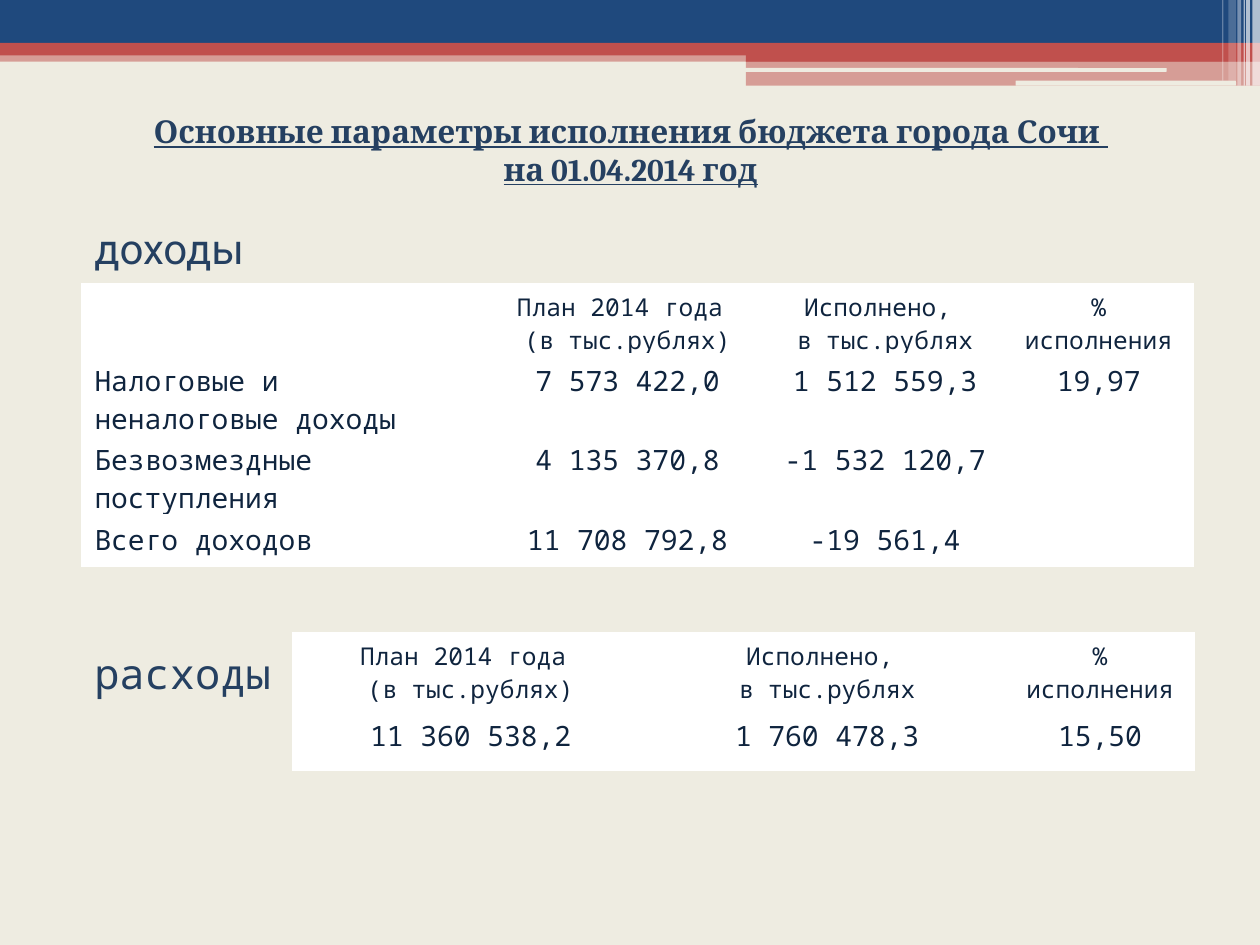
"""Build a slide with the income and expense tables of a city budget."""
from pptx import Presentation, util as u
from pptx.dml.color import RGBColor
from pptx.enum import shapes, text
from pptx.oxml.ns import qn
from lxml import etree

NAVY = RGBColor(0x1F, 0x49, 0x7D)
RED = RGBColor(0xC0, 0x50, 0x4D)
CREAM = RGBColor(0xEE, 0xEC, 0xE1)
WHITE = RGBColor(0xFF, 0xFF, 0xFF)
HEADING = RGBColor(0x25, 0x40, 0x61)
INK = RGBColor(0x0F, 0x24, 0x3E)
MONO = "Noto Sans Mono"
RECT = shapes.MSO_SHAPE.RECTANGLE
ROUND = shapes.MSO_SHAPE.ROUNDED_RECTANGLE

TITLE = "Основные параметры исполнения бюджета города Сочи \nна 01.04.2014 год"
HEADER = ["План 2014 года \n(в тыс.рублях)", "Исполнено, \nв тыс.рублях", "% исполнения"]
INCOME = [
    ["", *HEADER],
    ["Налоговые и неналоговые доходы", "7 573 422,0", "1 512 559,3", "19,97"],
    ["Безвозмездные поступления", "4 135 370,8", "-1 532 120,7", ""],
    ["Всего доходов", "11 708 792,8", "-19 561,4", ""],
]
EXPENSES = [HEADER, ["11 360 538,2", "1 760 478,3", "15,50"]]

LEFT = 0.65
LABELS = [("доходы", 1.72, "Roboto"), ("расходы", 5.09, MONO)]
TABLES = [
    (INCOME, LEFT, 2.25, [3.23, 2.2, 1.89, 1.5], [0.41] * 4),
    (EXPENSES, 2.32, 5.02, [2.83, 2.83, 1.5], [0.62, 0.47]),
]
BANDS = [
    (RECT, 0, 0.4, 10, 0.09, RED, 50),
    (RECT, 0, 0, 10, 0.34, NAVY, 100),
    (RECT, 0, 0.34, 10, 0.1, RED, 100),
    (RECT, 5.92, 0.39, 4.08, 0.1, RED, 100),
    (RECT, 5.92, 0.48, 4.08, 0.2, RED, 50),
    (ROUND, 5.91, 0.54, 3.35, 0.03, CREAM, 100),
    (ROUND, 8.06, 0.64, 1.75, 0.04, CREAM, 100),
]
STRIPES = [
    (9.94, 0.06, 0.68, 65), (9.89, 0.03, 0.68, 65), (9.87, 0.01, 0.68, 60),
    (9.82, 0.03, 0.68, 40), (9.75, 0.06, 0.64, 20), (9.7, 0.01, 0.64, 30),
]


def inches(*values):
    return [u.Inches(value) for value in values]


def write(frame, content, *, size, font=MONO, color=INK, align=text.PP_ALIGN.LEFT,
          bold=False, underline=False):
    frame.word_wrap = True
    for index, line in enumerate(content.split("\n")):
        paragraph = frame.add_paragraph() if index else frame.paragraphs[0]
        paragraph.alignment = align
        run = paragraph.add_run()
        run.text = line
        run.font.name, run.font.size = font, u.Pt(size)
        run.font.bold, run.font.underline = bold, underline
        run.font.color.rgb = color


def add_band(slide, kind, left, top, width, height, color, opacity):
    shape = slide.shapes.add_shape(kind, *inches(left, top, width, height))
    shape.shadow.inherit = False
    shape.line.fill.background()
    shape.fill.solid()
    shape.fill.fore_color.rgb = color
    if opacity < 100:
        fill = shape.fill._xPr.find(qn("a:solidFill"))
        etree.SubElement(fill[0], qn("a:alpha"), val=str(opacity * 1000))


def add_borders(cell, bottom):
    properties = cell._tc.get_or_add_tcPr()
    for index, side in enumerate(("lnL", "lnR", "lnT", "lnB")):
        points = bottom if side == "lnB" else 1
        line = etree.Element(qn("a:" + side), w=str(u.Pt(points)))
        fill = etree.SubElement(line, qn("a:solidFill"))
        etree.SubElement(fill, qn("a:srgbClr"), val=str(WHITE))
        properties.insert(index, line)


def add_budget_table(slide, rows, left, top, widths, heights):
    table = slide.shapes.add_table(
        len(rows), len(widths), *inches(left, top, sum(widths), sum(heights))).table
    table.first_row = table.horz_banding = False
    for column, width in zip(table.columns, widths):
        column.width = u.Inches(width)
    for row, height in zip(table.rows, heights):
        row.height = u.Inches(height)
    for r, values in enumerate(rows):
        for c, value in enumerate(values):
            cell = table.cell(r, c)
            cell.fill.solid()
            cell.fill.fore_color.rgb = WHITE
            add_borders(cell, bottom=1 if r else 3)
            if value:
                named = len(values) == 4 and c == 0
                write(cell.text_frame, value, size=16 if r else 14,
                      align=text.PP_ALIGN.LEFT if named else text.PP_ALIGN.CENTER)


def main():
    presentation = Presentation()
    presentation.slide_width, presentation.slide_height = inches(10, 7.5)
    slide = presentation.slides.add_slide(presentation.slide_layouts[5])
    slide.background.fill.solid()
    slide.background.fill.fore_color.rgb = CREAM

    for band in BANDS:
        add_band(slide, *band)
    for left, width, height, opacity in STRIPES:
        add_band(slide, RECT, left, 0, width, height, WHITE, opacity)

    title = slide.shapes.title
    title.left, title.top, title.width, title.height = inches(0.24, 0.84, 9.53, 0.71)
    title.text_frame.auto_size = text.MSO_AUTO_SIZE.NONE
    title.text_frame.vertical_anchor = text.MSO_ANCHOR.TOP
    write(title.text_frame, TITLE, size=18, font="Cambria", color=HEADING,
          align=text.PP_ALIGN.CENTER, bold=True, underline=True)

    for label, top, font in LABELS:
        box = slide.shapes.add_textbox(*inches(LEFT, top, 2.2, 0.5))
        write(box.text_frame, label, size=24, font=font, color=HEADING)
    for table in TABLES:
        add_budget_table(slide, *table)
    presentation.save("out.pptx")


if __name__ == "__main__":
    main()
